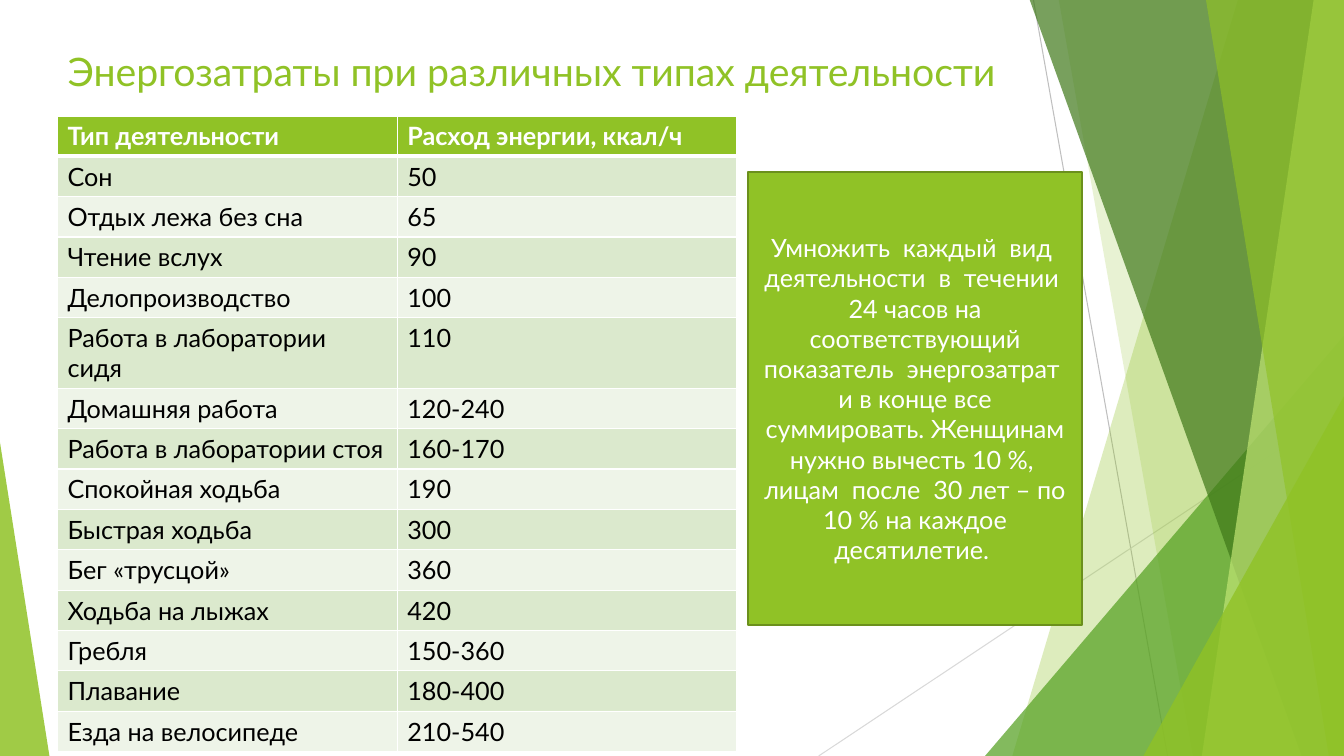
from lxml.etree import SubElement
from pptx import Presentation
from pptx.dml.color import RGBColor
from pptx.enum.shapes import MSO_CONNECTOR, MSO_SHAPE
from pptx.enum.text import MSO_ANCHOR, PP_ALIGN
from pptx.oxml import parse_xml
from pptx.oxml.ns import nsdecls, qn
from pptx.util import Inches, Pt

TITLE = "Энергозатраты при различных типах деятельности"
ADVICE = (
    "Умножить  каждый  вид  деятельности  в  течении  24 часов на "
    "соответствующий показатель  энергозатрат  и в конце все суммировать. "
    "Женщинам нужно вычесть 10 %,  лицам  после  30 лет – по 10 % на каждое "
    "десятилетие. "
)
ACTIVITIES = [
    ("Тип деятельности", "Расход энергии, ккал/ч"),
    ("Сон", "50"),
    ("Отдых лежа без сна", "65"),
    ("Чтение вслух", "90"),
    ("Делопроизводство", "100"),
    ("Работа в лаборатории сидя", "110"),
    ("Домашняя работа", "120-240"),
    ("Работа в лаборатории стоя", "160-170"),
    ("Спокойная ходьба", "190"),
    ("Быстрая ходьба", "300"),
    ("Бег «трусцой»", "360"),
    ("Ходьба на лыжах", "420"),
    ("Гребля", "150-360"),
    ("Плавание", "180-400"),
    ("Езда на велосипеде", "210-540"),
]

WIDTH, HEIGHT, BAND_TOP = 13.33, 7.5, -0.01
GREEN, DARK_GREEN, WHITE, BLACK = "90C226", "6B901C", "FFFFFF", "000000"
ROW_FILLS = ["EEF4E8", "DBE9CD"]
THIN_LINES = [
    ((10.25, 0), (11.58, HEIGHT), "BFBFBF"),
    ((WIDTH, 4.03), (8.12, HEIGHT), "D9D9D9"),
]
DECORATIONS = [
    ("band", (12.28, 10.04), GREEN, 30),
    ("band", (10.5, 11.83), GREEN, 20),
    ("triangle", (9.77, 3.33, 3.56, 4.17, 1), "54A021", 72),
    ("band", (10.21, 12.91), "3F7819", 70),
    ("band", (13.03, 11.92), "C0E474", 70),
    ("band", (11.96, 13.18), GREEN, 65),
    ("triangle", (11.34, 3.93, 1.99, 3.57, 1), GREEN, 80),
    ("triangle", (0, 4.39, 0.49, 3.11, 0), GREEN, 85),
]
TEXT_FORMAT = {"name": "Lato", "size": Pt(18), "bold": False}


def color(value):
    return RGBColor.from_string(value)


def inches(*values):
    return [Inches(value) for value in values]


def write(text_frame, text, text_color, alignment=PP_ALIGN.LEFT, **changes):
    text_frame.word_wrap = True
    paragraph = text_frame.paragraphs[0]
    paragraph.alignment = alignment
    run = paragraph.add_run()
    run.text = text
    for name, value in {**TEXT_FORMAT, **changes}.items():
        setattr(run.font, name, value)
    run.font.color.rgb = color(text_color)


def fill_shape(shape, fill_color, opacity=100):
    shape.shadow.inherit = False
    shape.fill.solid()
    shape.fill.fore_color.rgb = color(fill_color)
    shape.line.fill.background()
    if opacity < 100:
        hue = shape._element.spPr.find(qn("a:solidFill"))[0]
        SubElement(hue, qn("a:alpha"), val=str(opacity * 1000))


def add_thin_line(shapes, start, end, line_color):
    line = shapes.add_connector(MSO_CONNECTOR.STRAIGHT, *inches(*start, *end))
    line.line.color.rgb = color(line_color)
    line.line.width = Pt(0.75)
    SubElement(line._element.spPr, qn("a:effectLst"))


def add_band(shapes, top_left, bottom_left):
    builder = shapes.build_freeform(*inches(top_left, BAND_TOP))
    corners = [(WIDTH, BAND_TOP), (WIDTH, HEIGHT), (bottom_left, HEIGHT)]
    builder.add_line_segments([inches(*corner) for corner in corners], close=True)
    return builder.convert_to_shape()


def add_triangle(shapes, left, top, width, height, apex):
    triangle = shapes.add_shape(
        MSO_SHAPE.ISOSCELES_TRIANGLE, *inches(left, top, width, height)
    )
    triangle.adjustments[0] = apex
    return triangle


def set_borders(cell, bottom_width):
    widths = {"L": 1, "R": 1, "T": 1, "B": bottom_width}
    properties = cell._tc.get_or_add_tcPr()
    for index, (side, width) in enumerate(widths.items()):
        properties.insert(index, parse_xml(
            f'<a:ln{side} {nsdecls("a")} w="{Pt(width)}"><a:solidFill>'
            f'<a:srgbClr val="{WHITE}"/></a:solidFill></a:ln{side}>'
        ))


def add_activity_table(shapes):
    row_count = len(ACTIVITIES)
    table = shapes.add_table(
        row_count, 2, *inches(0.57, 1.15, 6.74, 0.33 * row_count)
    ).table
    for row_index, activity in enumerate(ACTIVITIES):
        header = row_index == 0
        for column_index, text in enumerate(activity):
            cell = table.cell(row_index, column_index)
            cell.fill.solid()
            cell.fill.fore_color.rgb = color(
                GREEN if header else ROW_FILLS[row_index % 2]
            )
            write(cell.text_frame, text, WHITE if header else BLACK, bold=header)
            set_borders(cell, 3 if header else 1)


def add_advice(shapes):
    box = shapes.add_shape(MSO_SHAPE.RECTANGLE, *inches(7.42, 1.71, 3.31, 4.49))
    fill_shape(box, GREEN)
    box.line.color.rgb = color(DARK_GREEN)
    box.line.width = Pt(1.5)
    box.text_frame.vertical_anchor = MSO_ANCHOR.MIDDLE
    write(box.text_frame, ADVICE, WHITE, PP_ALIGN.CENTER)


def place_title(shapes):
    title = shapes.title
    places = inches(0.57, 0.42, 9.4, 0.64)
    for name, value in zip(("left", "top", "width", "height"), places):
        setattr(title, name, value)
    title.text_frame.vertical_anchor = MSO_ANCHOR.TOP
    title.text_frame.margin_right = 0
    write(title.text_frame, TITLE, GREEN, size=Pt(28))
    shapes._spTree.append(title._element)


def main():
    presentation = Presentation()
    presentation.slide_width, presentation.slide_height = inches(WIDTH, HEIGHT)
    slide = presentation.slides.add_slide(presentation.slide_layouts[5])
    shapes = slide.shapes
    for thin_line in THIN_LINES:
        add_thin_line(shapes, *thin_line)
    builders = {"band": add_band, "triangle": add_triangle}
    for kind, geometry, fill_color, opacity in DECORATIONS:
        fill_shape(builders[kind](shapes, *geometry), fill_color, opacity)
    place_title(shapes)
    add_activity_table(shapes)
    add_advice(shapes)
    presentation.save("out.pptx")


if __name__ == "__main__":
    main()
